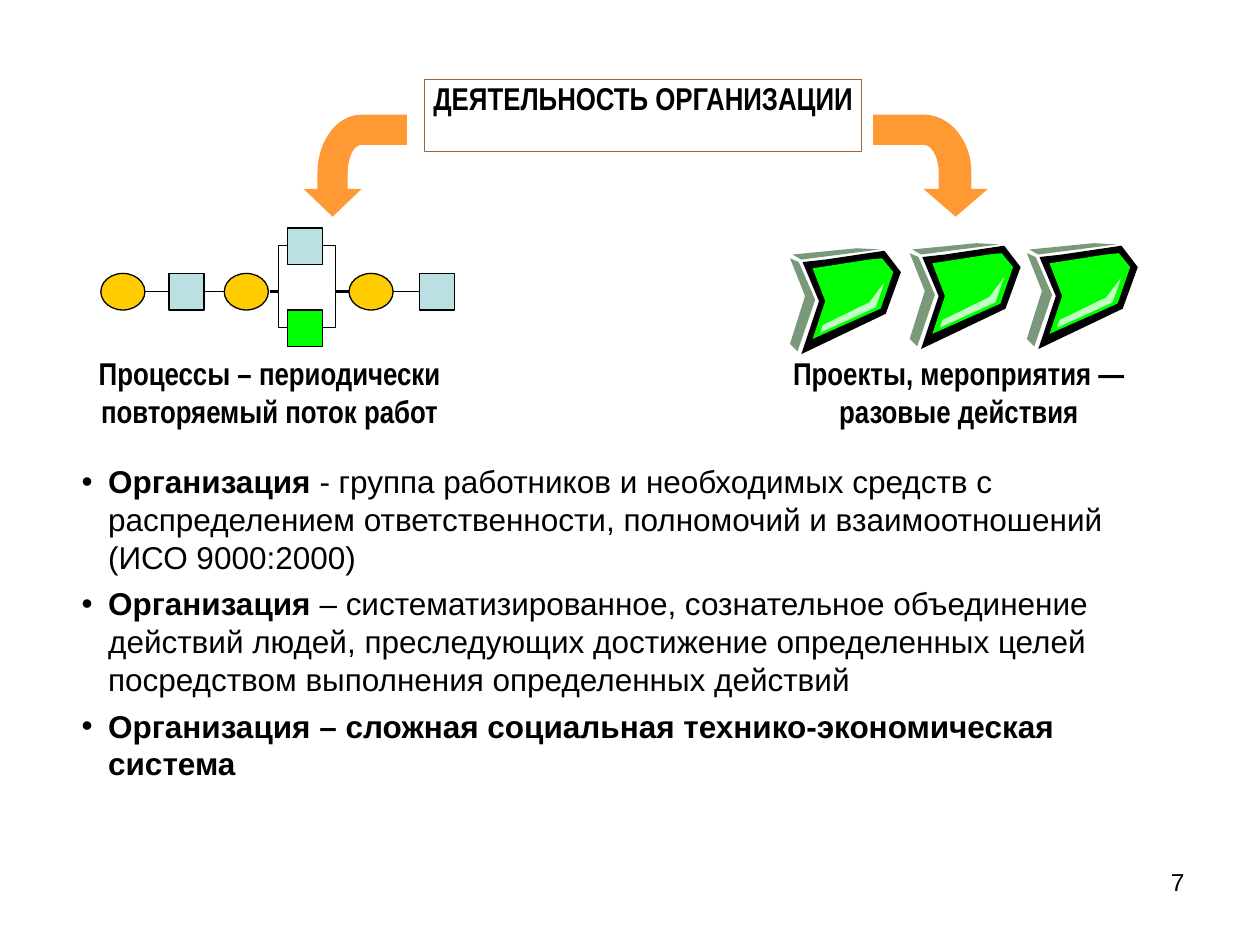
from math import cos, pi, sin
from typing import NamedTuple

from lxml.etree import SubElement
from pptx import Presentation
from pptx.dml.color import RGBColor
from pptx.enum.shapes import MSO_CONNECTOR, MSO_SHAPE
from pptx.enum.text import MSO_ANCHOR, MSO_AUTO_SIZE, PP_ALIGN
from pptx.oxml.ns import qn
from pptx.util import Emu, Pt

EMU_PER_PX = 9144  # 100 px to the inch
COLORS = {
    "black": "000000", "white": "FFFFFF", "blue": "BBE0E3", "yellow": "FFCC00",
    "green": "00FF00", "shade": "7A997A", "shine": "BFFFBF",
    "orange": "FF9933", "brown": "996633",
}
Point = tuple[float, float]


class Node(NamedTuple):
    kind: MSO_SHAPE
    left: int
    top: int
    width: int
    color: str


class Elbow(NamedTuple):
    start: Point
    end: Point


class BentArrow(NamedTuple):
    tail: int
    bend: int
    outer: int
    inner: int
    head: int


class Facet(NamedTuple):
    color: str
    points: list[Point]


class Caption(NamedTuple):
    left: int
    text: str


NODE_HEIGHT = 29
ROW_TOP = 217
RECT, OVAL = MSO_SHAPE.RECTANGLE, MSO_SHAPE.OVAL
CHAIN = [
    Node(OVAL, 80, ROW_TOP, 35, "yellow"),
    Node(RECT, 134, ROW_TOP, 28, "blue"),
    Node(OVAL, 178, ROW_TOP, 35, "yellow"),
    Node(OVAL, 277, ROW_TOP, 35, "yellow"),
    Node(RECT, 333, ROW_TOP, 28, "blue"),
]
BRANCHES = [Node(RECT, 228, 181, 28, "blue"), Node(RECT, 228, 246, 28, "green")]
LINKED = [(0, 1), (1, 2), (3, 4)]
ELBOWS = [
    Elbow((256, 195), (277, 231)), Elbow((214, 231), (228, 195)),
    Elbow((214, 232), (228, 260)), Elbow((256, 260), (277, 232)),
]
ARROWS = [BentArrow(323, 287, 252, 276, 241), BentArrow(693, 733, 771, 745, 784)]
CHEVRON = [
    Facet("white", [(638, 235), (625, 274), (635, 283), (706, 251), (718, 214),
                    (703, 197), (680, 196), (624, 202)]),
    Facet("black", [(655, 206), (702, 199), (715, 216), (703, 249), (636, 281),
                    (650, 239), (637, 208)]),
    Facet("green", [(690, 206), (700, 205), (709, 216), (699, 245), (645, 269),
                    (655, 239), (645, 213)]),
    Facet("shade", [(627, 273), (639, 235), (627, 205), (634, 208), (647, 238),
                    (633, 279)]),
    Facet("shade", [(680, 197), (629, 202), (636, 206), (698, 198)]),
    Facet("shine", [(653, 258), (651, 264), (695, 244), (702, 224), (690, 240)]),
]
CHEVRON_OFFSETS = [(0, 0), (188, -4), (95, -4)]
CAPTIONS = [
    Caption(54, "Процессы – периодически повторяемый поток работ"),
    Caption(601, "Проекты, мероприятия — разовые действия"),
]
DEFINITIONS = [
    ("Организация", " - группа работников и необходимых средств с распределением "
     "ответственности, полномочий и взаимоотношений (ИСО 9000:2000)"),
    ("Организация", " – систематизированное, сознательное объединение действий людей, "
     "преследующих достижение определенных целей посредством выполнения "
     "определенных действий"),
    ("Организация – сложная социальная технико-экономическая система", ""),
]


def px(length: float) -> Emu:
    return Emu(round(length * EMU_PER_PX))


def rgb(name: str) -> RGBColor:
    return RGBColor.from_string(COLORS[name])


def set_font(para, name: str, size: int) -> None:
    para.font.name, para.font.size = name, Pt(size)
    para.font.color.rgb = rgb("black")


def add_text_box(page, left: int, top: int, width: int, height: int):
    frame = page.shapes.add_textbox(px(left), px(top), px(width), px(height)).text_frame
    frame.word_wrap = True
    return frame


def add_node(page, node: Node):
    shape = page.shapes.add_shape(
        node.kind, px(node.left), px(node.top), px(node.width), px(NODE_HEIGHT))
    shape.shadow.inherit = False
    shape.fill.solid()
    shape.fill.fore_color.rgb = rgb(node.color)
    shape.line.color.rgb = rgb("black")
    shape.line.width = Pt(0.75)
    return shape


def add_line(page, kind: MSO_CONNECTOR, start: tuple, end: tuple):
    line = page.shapes.add_connector(kind, *start, *end)
    line.line.color.rgb = rgb("black")
    line.line.width = Pt(0.75)
    SubElement(line._element.spPr, qn("a:effectLst"))
    return line


def link(page, before, after) -> None:
    """Join the right side of one node to the left side of the next."""
    middle = before.top + before.height // 2
    line = add_line(page, MSO_CONNECTOR.STRAIGHT,
                    (before.left + before.width, middle), (after.left, middle))
    if before.auto_shape_type == RECT:
        line.begin_connect(before, 3)
    if after.auto_shape_type == RECT:
        line.end_connect(after, 1)


def add_outline(shapes, points: list[Point], color: str) -> None:
    corners = [(px(x), px(y)) for x, y in points]
    builder = shapes.build_freeform(*corners[0], scale=1.0)
    builder.add_line_segments(corners[1:], close=True)
    shape = builder.convert_to_shape()
    shape.shadow.inherit = False
    shape.fill.solid()
    shape.fill.fore_color.rgb = rgb(color)
    shape.line.fill.background()


def quarter_arc(bend: int, side: int, top: int, bottom: int) -> list[Point]:
    """Points from (bend, top) round to (side, bottom)."""
    steps = 16
    angles = [pi / 2 * step / steps for step in range(steps + 1)]
    return [(bend + (side - bend) * sin(a), bottom - (bottom - top) * cos(a))
            for a in angles]


def add_bent_arrow(page, arrow: BentArrow) -> None:
    top, under, bend_end, neck, tip = 91, 115, 137, 150, 172
    outer = quarter_arc(arrow.bend, arrow.outer, top, bend_end)
    inner = quarter_arc(arrow.bend, arrow.inner, under, bend_end)
    head = [(arrow.outer, neck), (arrow.head, neck),
            ((arrow.head + arrow.bend) / 2, tip), (arrow.bend, neck), (arrow.inner, neck)]
    add_outline(page.shapes, [(arrow.tail, top), *outer, *head, *reversed(inner),
                              (arrow.tail, under)], "orange")


def add_heading(page) -> None:
    title = page.shapes.title
    title.left, title.top, title.width, title.height = px(337), px(63), px(347), px(57)
    title.line.color.rgb = rgb("brown")
    title.line.width = Pt(0.75)
    frame = title.text_frame
    frame.text = "ДЕЯТЕЛЬНОСТЬ ОРГАНИЗАЦИИ"
    frame.auto_size = MSO_AUTO_SIZE.NONE
    frame.vertical_anchor = MSO_ANCHOR.TOP
    frame.margin_left = frame.margin_right = frame.margin_top = frame.margin_bottom = 0
    para = frame.paragraphs[0]
    para.alignment = PP_ALIGN.CENTER
    set_font(para, "Arial Narrow", 18)
    para.font.bold = True


def add_definitions(page) -> None:
    frame = add_text_box(page, 55, 362, 881, 264)
    for index, (term, meaning) in enumerate(DEFINITIONS):
        para = frame.paragraphs[0] if index == 0 else frame.add_paragraph()
        if index:
            para.space_before = Pt(5)
        properties = para._p.get_or_add_pPr()
        properties.set("marL", str(px(21)))
        properties.set("indent", str(px(-21)))
        SubElement(properties, qn("a:buFont"), typeface="Arial")
        SubElement(properties, qn("a:buChar"), char="•")
        set_font(para, "Arial", 18)
        span = para.add_run()
        span.text = term
        span.font.bold = True
        if meaning:
            para.add_run().text = meaning


def main() -> None:
    deck = Presentation()
    deck.slide_width, deck.slide_height = px(1000), px(750)
    page = deck.slides.add_slide(deck.slide_layouts[5])
    add_heading(page)
    add_definitions(page)

    chain = [add_node(page, node) for node in CHAIN]
    for node in BRANCHES:
        add_node(page, node)
    for before, after in LINKED:
        link(page, chain[before], chain[after])
    for elbow in ELBOWS:
        add_line(page, MSO_CONNECTOR.ELBOW, tuple(map(px, elbow.start)),
                 tuple(map(px, elbow.end)))

    for right, down in CHEVRON_OFFSETS:
        chevron = page.shapes.add_group_shape()
        for facet in CHEVRON:
            add_outline(chevron.shapes, [(x + right, y + down) for x, y in facet.points],
                        facet.color)
    for arrow in ARROWS:
        add_bent_arrow(page, arrow)

    for caption in CAPTIONS:
        para = add_text_box(page, caption.left, 276, 320, 94).paragraphs[0]
        para.text = caption.text
        para.alignment = PP_ALIGN.CENTER
        set_font(para, "Arial Narrow", 18)
        para.font.bold = True

    number = add_text_box(page, 717, 683, 233, 52).paragraphs[0]
    number.text = "7"
    number.alignment = PP_ALIGN.RIGHT
    set_font(number, "Arial", 14)
    deck.save("out.pptx")


if __name__ == "__main__":
    main()
